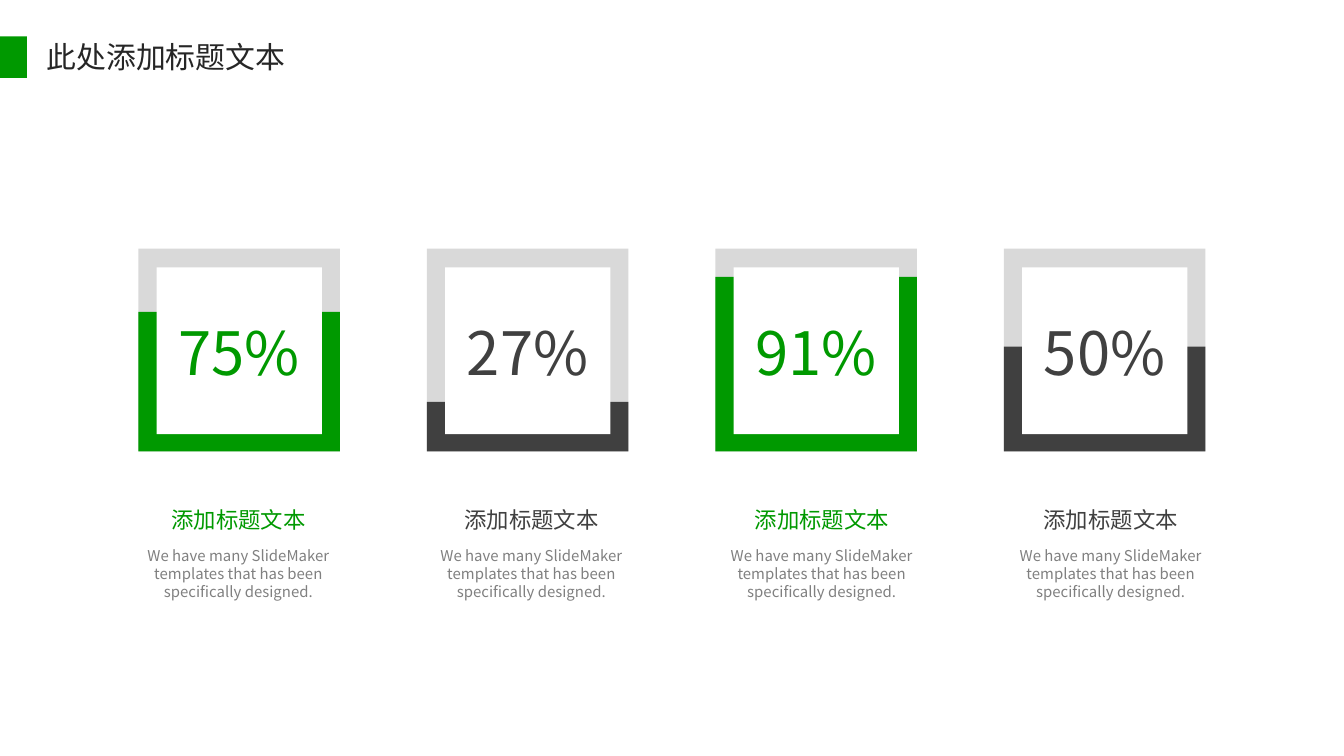
from lxml.etree import SubElement
from pptx import Presentation
from pptx.dml.color import RGBColor
from pptx.enum.shapes import MSO_SHAPE as Shape
from pptx.enum.text import MSO_AUTO_SIZE as AutoSize, PP_ALIGN as Align
from pptx.oxml.ns import qn
from pptx.util import Inches, Pt

GREEN = RGBColor(0x00, 0x99, 0x00)
DARK = RGBColor(0x40, 0x40, 0x40)
TRACK = RGBColor(0xD9, 0xD9, 0xD9)
WHITE = RGBColor(0xFF, 0xFF, 0xFF)
GREY = RGBColor(0x80, 0x80, 0x80)
HEADING = RGBColor(0x26, 0x26, 0x26)

SLIDE_WIDTH = 10
SLIDE_HEIGHT = SLIDE_WIDTH * 9 / 16
FIRST_LEFT, LAST_LEFT = 1.03, 7.47
GAUGE_TOP, GAUGE_WIDTH, GAUGE_HEIGHT = 1.85, 1.5, 1.51
HOLE_TOP, HOLE_WIDTH, HOLE_HEIGHT = 1.99, 1.23, 1.24
VALUE_WIDTH = 1.26
CAPTION = "添加标题文本"
DESCRIPTION = "We have many SlideMaker templates that has been specifically designed."

# percentage, top of the filled part, colour, left of the description
GAUGES = [
    ("75%", 2.32, GREEN, 0.99),
    ("27%", 2.99, DARK, 3.17),
    ("91%", 2.06, GREEN, 5.33),
    ("50%", 2.58, DARK, 7.48),
]
COLUMN_STEP = (LAST_LEFT - FIRST_LEFT) / (len(GAUGES) - 1)


class SlideBuilder:
    def __init__(self, slide, font="Noto Sans CJK SC"):
        self.slide = slide
        self.font = font

    def rectangle(self, left, top, width, height, color):
        box = self.slide.shapes.add_shape(
            Shape.RECTANGLE, Inches(left), Inches(top), Inches(width), Inches(height))
        box.shadow.inherit = False
        box.fill.solid()
        box.fill.fore_color.rgb = color
        box.line.fill.background()

    def text(self, left, top, width, height, words, size, color,
             align=Align.CENTER, wrap=True, inset=(0, 0), spacing=None):
        box = self.slide.shapes.add_textbox(
            Inches(left), Inches(top), Inches(width), Inches(height))
        frame = box.text_frame
        frame.word_wrap = wrap
        frame.auto_size = AutoSize.SHAPE_TO_FIT_TEXT
        frame.margin_left = frame.margin_right = Inches(inset[0])
        frame.margin_top = frame.margin_bottom = Inches(inset[1])
        para = frame.paragraphs[0]
        para.alignment = align
        para.line_spacing = spacing
        span = para.add_run()
        span.text = words
        span.font.size = Pt(size)
        span.font.color.rgb = color
        span.font.name = self.font
        SubElement(span.font._element, qn("a:ea"), typeface=self.font)

    def gauge(self, left, percentage, level_top, color):
        """Draw a square frame filled from the bottom, with its value inside."""
        center = left + GAUGE_WIDTH / 2
        bottom = GAUGE_TOP + GAUGE_HEIGHT
        self.rectangle(left, GAUGE_TOP, GAUGE_WIDTH, GAUGE_HEIGHT, TRACK)
        self.rectangle(left, level_top, GAUGE_WIDTH, bottom - level_top, color)
        self.rectangle(center - HOLE_WIDTH / 2, HOLE_TOP,
                       HOLE_WIDTH, HOLE_HEIGHT, WHITE)
        self.text(center - VALUE_WIDTH / 2, 2.35, VALUE_WIDTH, 0.54,
                  percentage, 32, color)

    def label(self, left, color):
        self.text(left + 0.18, 3.68, 1.21, 0.33, CAPTION, 12, color,
                  wrap=False, inset=(0.1, 0.05), spacing=1.2)
        self.text(left, 4.07, 1.57, 0.4, DESCRIPTION, 8, GREY)

    def heading(self, words):
        self.rectangle(0, 0.27, 0.2, 0.31, GREEN)
        self.text(0.35, 0.29, 3.04, 0.27, words, 16, HEADING, align=Align.LEFT)


def main():
    deck = Presentation()
    deck.slide_width, deck.slide_height = Inches(SLIDE_WIDTH), Inches(SLIDE_HEIGHT)
    page = SlideBuilder(deck.slides.add_slide(deck.slide_layouts[6]))
    page.heading("此处添加标题文本")
    for column, (percentage, level_top, color, label_left) in enumerate(GAUGES):
        page.gauge(FIRST_LEFT + column * COLUMN_STEP, percentage, level_top, color)
        page.label(label_left, color)
    deck.save("out.pptx")


if __name__ == "__main__":
    main()
